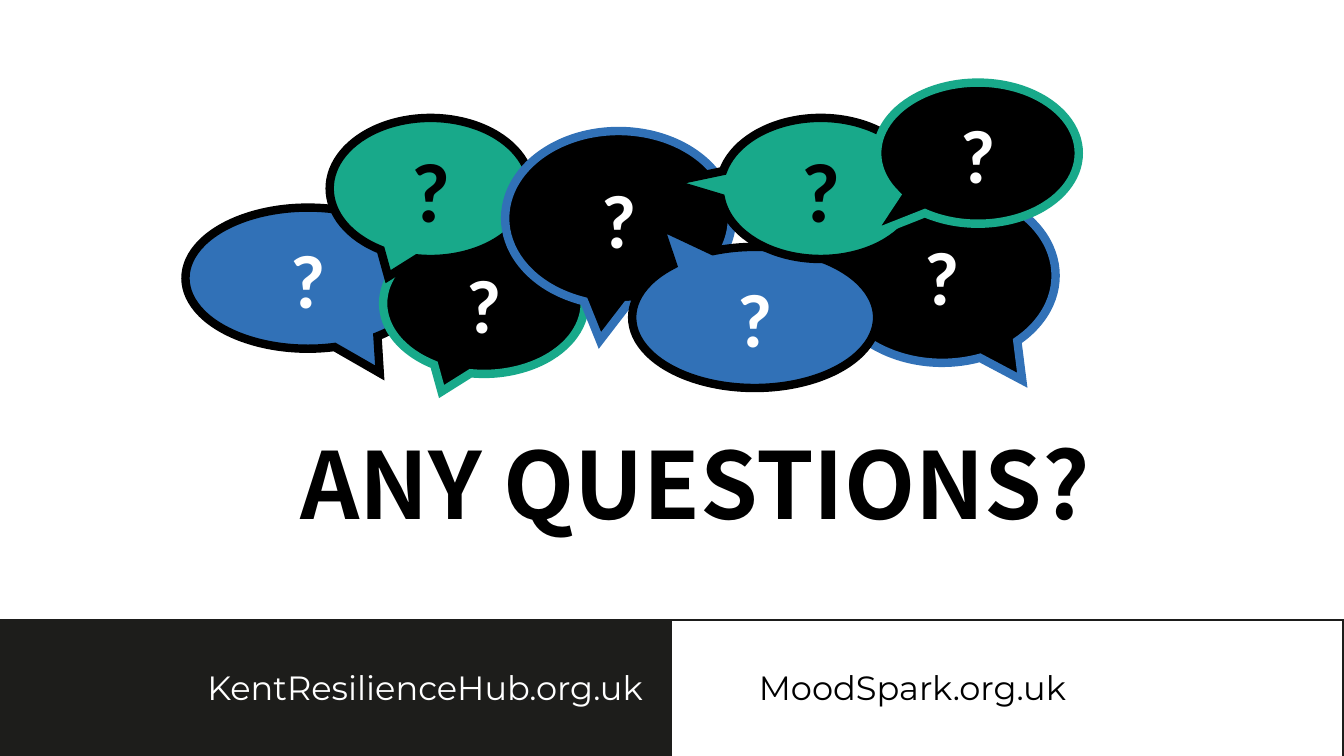
from lxml.etree import SubElement
from pptx import Presentation
from pptx.dml.color import RGBColor
from pptx.enum.shapes import MSO_SHAPE
from pptx.enum.text import MSO_ANCHOR, PP_ALIGN
from pptx.oxml.ns import qn
from pptx.util import Pt

SCALE = 9144  # EMU per px, 100 px to the inch
COLORS = {
    "white": "FFFFFF",
    "black": "000000",
    "dark": "1D1D1B",
    "blue": "3171B7",
    "green": "18A98A",
}
TAIL = (-0.21, 0.625)  # usual tip of a bubble's tail

# left, top, width, height, tail, fill, line; from back to front
BUBBLES = [
    (184, 206, 243, 140, (0.293, 0.672), "blue", "black"),
    (380, 231, 200, 140, TAIL, "black", "green"),
    (822, 187, 225, 173, (0.353, 0.6), "black", "blue"),
    (327, 117, 200, 140, TAIL, "green", "black"),
    (501, 130, 225, 173, (-0.082, 0.701), "black", "blue"),
    (627, 245, 243, 140, (-0.387, -0.648), "blue", "black"),
    (714, 117, 200, 140, (-0.752, -0.043), "green", "black"),
    (870, 82, 200, 140, (-0.534, 0.578), "black", "green"),
]


def px(*sizes):
    return [size * SCALE for size in sizes]


def color(name):
    return RGBColor.from_string(COLORS[name])


def write(frame, text, font, size, tint, bold=False):
    frame.word_wrap = True
    para = frame.paragraphs[0]
    para.text = text
    para.alignment = PP_ALIGN.CENTER
    para.font.name = font
    para.font.size = Pt(size)
    para.font.bold = bold
    para.font.color.rgb = color(tint)
    return para


def add_shape(slide, kind, box, fill, line, width):
    shape = slide.shapes.add_shape(kind, *px(*box))
    shape.shadow.inherit = False
    shape.fill.solid()
    shape.fill.fore_color.rgb = color(fill)
    shape.line.color.rgb = color(line)
    shape.line.width = Pt(width)
    # Sharp corners
    edge = shape.line._get_or_add_ln()
    SubElement(edge, qn("a:miter"), lim="800000")
    return shape


def add_label(slide, box, text, tint):
    label = slide.shapes.add_textbox(*px(*box))
    write(label.text_frame, text, "Montserrat", 24, tint)


def add_bubble(slide, box, tail, fill, line):
    kind = MSO_SHAPE.OVAL_CALLOUT
    bubble = add_shape(slide, kind, box, fill, line, 6)
    for index, value in enumerate(tail):
        bubble.adjustments[index] = value
    frame = bubble.text_frame
    frame.vertical_anchor = MSO_ANCHOR.MIDDLE
    size, tint = (60, "black") if fill == "green" else (54, "white")
    write(frame, "?", "Calibri", size, tint, True)


def set_title(slide, box, text):
    title = slide.shapes.title
    title.left, title.top, title.width, title.height = px(*box)
    frame = title.text_frame
    frame.vertical_anchor = MSO_ANCHOR.MIDDLE
    para = write(frame, text, "Noto Sans CJK KR", 66, "black", True)
    para.line_spacing = 0.9


def main():
    deck = Presentation()
    deck.slide_width, deck.slide_height = px(1333, 750)
    slide = deck.slides.add_slide(deck.slide_layouts[0])
    sub = slide.placeholders[1].element
    sub.getparent().remove(sub)

    # Footer with the two sites
    rect = MSO_SHAPE.RECTANGLE
    add_shape(slide, rect, (-1, 615, 1333, 136), "white", "dark", 1)
    add_shape(slide, rect, (-1, 617, 667, 134), "dark", "dark", 1)
    add_label(slide, (184, 657, 475, 50), "KentResilienceHub.org.uk", "white")
    add_label(slide, (680, 657, 450, 50), "MoodSpark.org.uk", "black")

    # Heading
    set_title(slide, (235, 434, 909, 104), "ANY QUESTIONS?")

    # Speech bubbles
    for *box, tail, fill, line in BUBBLES:
        add_bubble(slide, box, tail, fill, line)

    deck.save("out.pptx")


if __name__ == "__main__":
    main()
